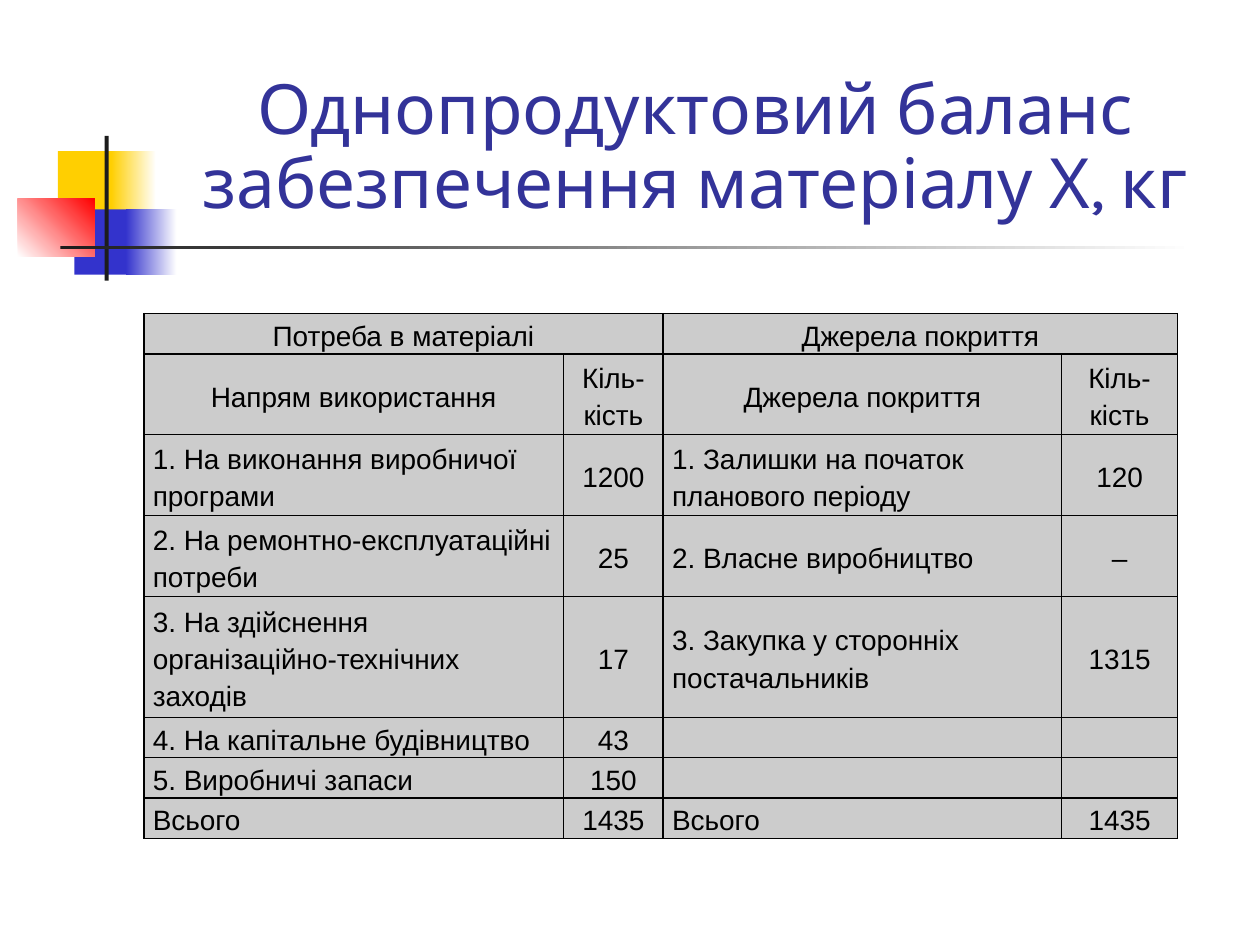
from lxml import etree
from pptx import Presentation
from pptx import util as u
from pptx.dml.color import RGBColor
from pptx.enum import shapes, text
from pptx.oxml.ns import qn

WHITE = RGBColor(0xFF, 0xFF, 0xFF)
BLACK = RGBColor(0, 0, 0)
YELLOW = RGBColor(0xFF, 0xCF, 0x01)
BLUE = RGBColor(0x33, 0x33, 0xCC)
RED = RGBColor(0xFF, 0, 0)
CHARCOAL = RGBColor(0x1C, 0x1C, 0x1C)
NAVY = RGBColor(0x33, 0x33, 0x99)
GREY = RGBColor(0xCC, 0xCC, 0xCC)

DECOR = [
    ((1.17, 3.05, 1.22, 1.32), (YELLOW,), 0),
    ((2.24, 3.05, 0.91, 1.32), (YELLOW, WHITE), 0),
    ((1.5, 4.22, 1.17, 1.32), (BLUE,), 0),
    ((2.54, 4.22, 1.02, 1.32), (BLUE, WHITE), 0),
    ((0.36, 4.01, 1.55, 1.17), (WHITE, RED), 45),
    ((2.11, 2.74, 0.08, 2.92), (CHARCOAL,), 0),
    ((1.22, 4.95, 22.86, 0.08), (CHARCOAL, WHITE), 0),
]

BALANCE = [
    ("Потреба в матеріалі", "", "Джерела покриття", ""),
    ("Напрям використання", "Кіль-кість", "Джерела покриття", "Кіль-кість"),
    ("1. На виконання виробничої програми", "1200",
     "1. Залишки на початок планового періоду", "120"),
    ("2. На ремонтно-експлуатаційні потреби", "25", "2. Власне виробництво", "–"),
    ("3. На здійснення організаційно-технічних заходів", "17",
     "3. Закупка у сторонніх постачальників", "1315"),
    ("4. На капітальне будівництво", "43", "", ""),
    ("5. Виробничі запаси", "150", "", ""),
    ("Всього", "1435", "Всього", "1435"),
]
HEADER_ROWS = 2
COLUMN_WIDTHS = (8.46, 2.01, 8.03, 2.34)
SINGLE, DOUBLE = 0.81, 1.63
ROW_HEIGHTS = (SINGLE,) + (DOUBLE,) * 4 + (SINGLE,) * 3


def write(frame, content, *, size, font, color, align, spacing):
    paragraph = frame.paragraphs[0]
    paragraph.alignment = align
    paragraph.line_spacing = spacing
    run = paragraph.add_run()
    run.text = content
    run.font.size = u.Pt(size)
    run.font.name = font
    run.font.color.rgb = color


def add_block(slide, box, colors, angle):
    block = slide.shapes.add_shape(shapes.MSO_SHAPE.RECTANGLE, *map(u.Cm, box))
    block.shadow.inherit = False
    block.line.fill.background()
    if len(colors) == 1:
        block.fill.solid()
        block.fill.fore_color.rgb = colors[0]
        return
    block.fill.gradient()
    block.fill.gradient_angle = angle
    for stop, color in zip(block.fill.gradient_stops, colors):
        stop.color.rgb = color


def add_title(slide, content):
    title = slide.shapes.add_textbox(u.Cm(3.2), u.Cm(0.58), u.Cm(21.64), u.Cm(4.06))
    frame = title.text_frame
    frame.word_wrap = True
    frame.vertical_anchor = text.MSO_ANCHOR.BOTTOM
    write(frame, content, size=39.6, font="Karla", color=NAVY,
          align=text.PP_ALIGN.CENTER, spacing=0.9)


def add_borders(cell):
    properties = cell._tc.get_or_add_tcPr()
    for side in ("a:lnL", "a:lnR", "a:lnT", "a:lnB"):
        line = etree.SubElement(properties, qn(side), w=str(u.Pt(1)))
        fill = etree.SubElement(line, qn("a:solidFill"))
        etree.SubElement(fill, qn("a:srgbClr"), val=str(BLACK))


def format_cell(cell):
    cell.margin_left = cell.margin_right = u.Cm(0.18)
    cell.margin_top = cell.margin_bottom = 0
    cell.vertical_anchor = text.MSO_ANCHOR.MIDDLE
    add_borders(cell)
    cell.fill.solid()
    cell.fill.fore_color.rgb = GREY


def add_balance(slide):
    frame = slide.shapes.add_table(
        len(ROW_HEIGHTS), len(COLUMN_WIDTHS), u.Cm(2.9), u.Cm(6.32),
        u.Cm(sum(COLUMN_WIDTHS)), u.Cm(sum(ROW_HEIGHTS)))
    balance = frame.table
    balance.first_row = balance.horz_banding = False
    for column, width in zip(balance.columns, COLUMN_WIDTHS):
        column.width = u.Cm(width)
    for row, height in zip(balance.rows, ROW_HEIGHTS):
        row.height = u.Cm(height)
    for left in (0, 2):
        balance.cell(0, left).merge(balance.cell(0, left + 1))
    for r, entries in enumerate(BALANCE):
        for c, entry in enumerate(entries):
            cell = balance.cell(r, c)
            format_cell(cell)
            if entry:
                centered = r < HEADER_ROWS or c % 2 == 1
                align = text.PP_ALIGN.CENTER if centered else text.PP_ALIGN.LEFT
                write(cell.text_frame, entry, size=16, font="Arial",
                      color=BLACK, align=align, spacing=1.2)


def main():
    deck = Presentation()
    deck.slide_width, deck.slide_height = u.Cm(25.4), u.Cm(19.05)
    slide = deck.slides.add_slide(deck.slide_layouts[6])
    for box, colors, angle in DECOR:
        add_block(slide, box, colors, angle)
    add_title(slide, "Однопродуктовий баланс забезпечення матеріалу Х, кг")
    add_balance(slide)
    deck.save("out.pptx")


if __name__ == "__main__":
    main()
